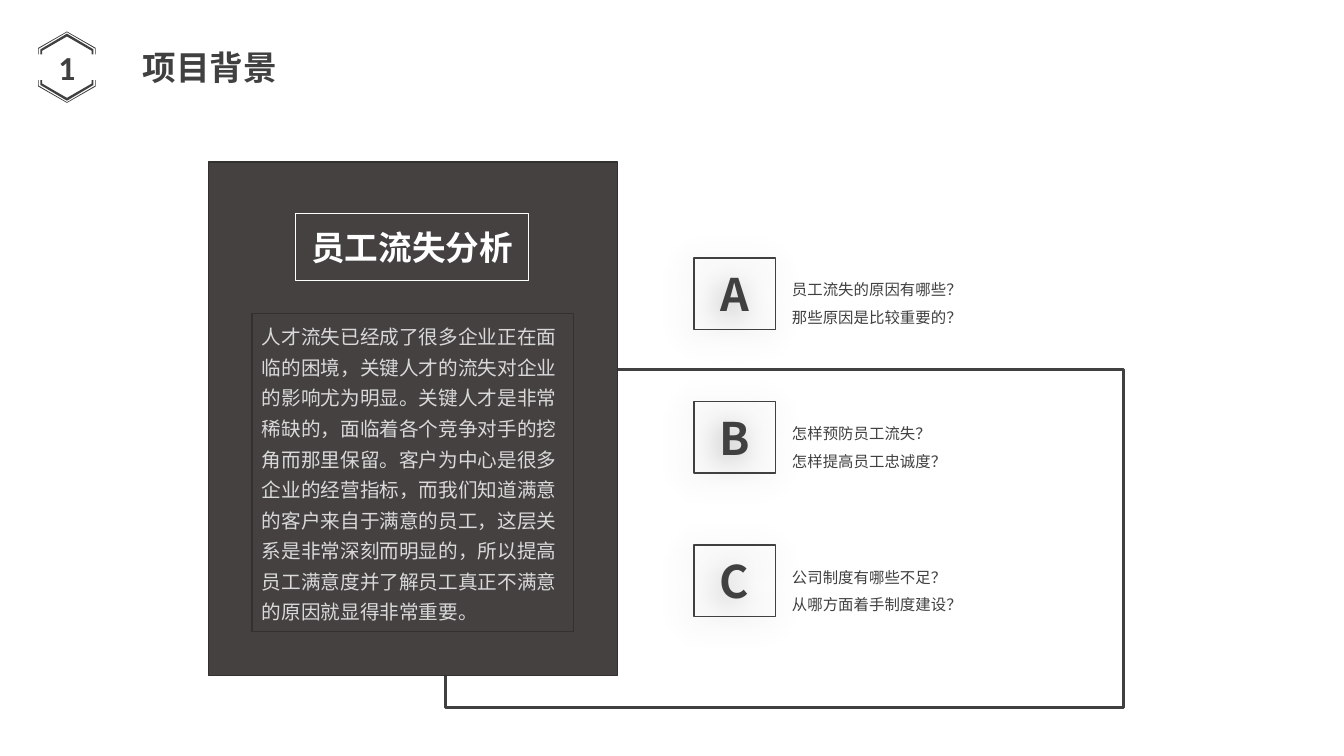
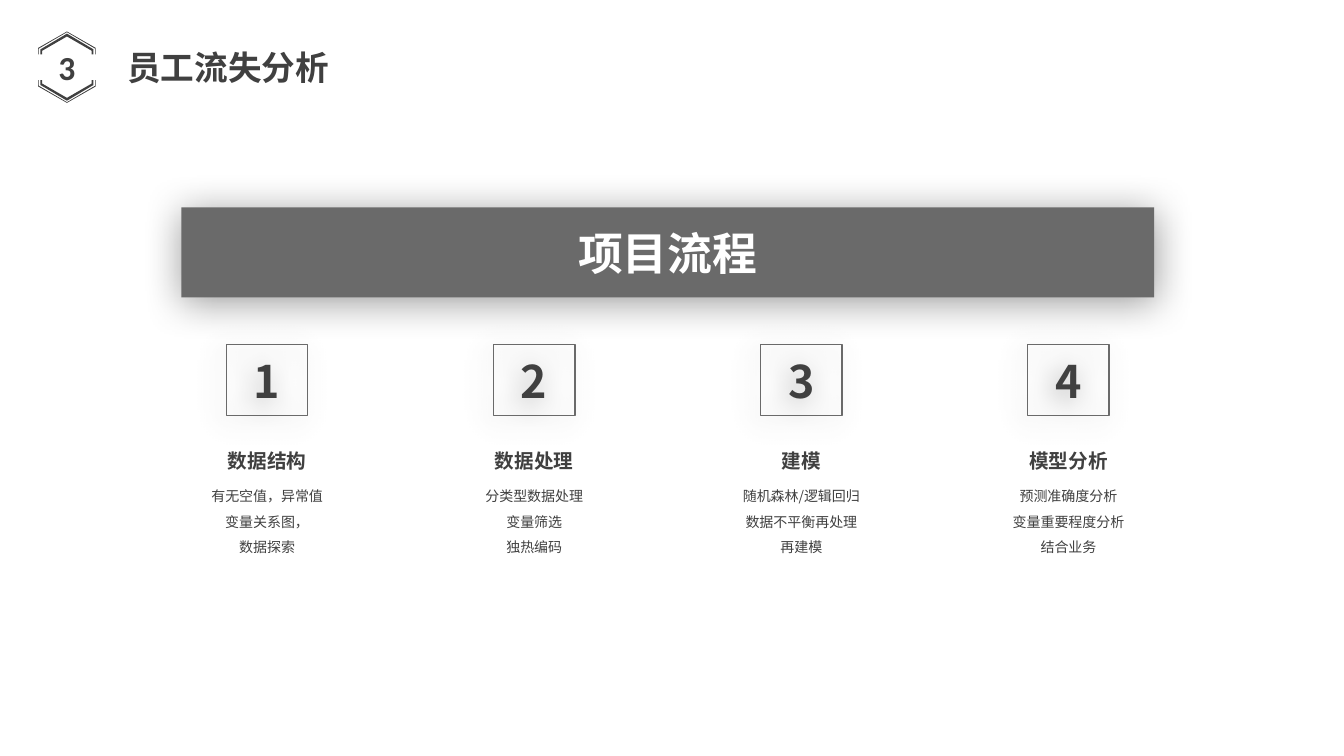
import dataclasses

import lxml.etree
import pptx
import pptx.dml.color
import pptx.enum.lang
import pptx.enum.shapes
import pptx.enum.text
import pptx.oxml.ns
import pptx.util

CHARCOAL = pptx.dml.color.RGBColor(0x40, 0x40, 0x40)
PANEL = pptx.dml.color.RGBColor(0x45, 0x41, 0x41)
PANEL_EDGE = pptx.dml.color.RGBColor(0x33, 0x30, 0x30)
GRAY = pptx.dml.color.RGBColor(0x6A, 0x6A, 0x6A)
PALE = pptx.dml.color.RGBColor(0xD9, 0xD9, 0xD9)
WHITE = pptx.dml.color.RGBColor(0xFF, 0xFF, 0xFF)

CJK_FONT = "Noto Sans CJK SC"
LATIN_FONT = "Calibri"
CELL = pptx.util.Inches(1) / 12
COLUMNS, ROWS = 160, 90
CARD_WIDTH, CARD_HEIGHT = 9.7, 8.5

LEFT = pptx.enum.text.PP_ALIGN.LEFT
CENTER = pptx.enum.text.PP_ALIGN.CENTER
TOP = pptx.enum.text.MSO_ANCHOR.TOP
MIDDLE = pptx.enum.text.MSO_ANCHOR.MIDDLE


def cells(count):
    """Turn a number of grid cells into a length."""
    return pptx.util.Emu(round(count * CELL))


@dataclasses.dataclass
class Box:
    """A rectangle measured in grid cells."""

    left: float
    top: float
    width: float
    height: float

    def inner(self, left, top, width, height):
        """Return a box placed relative to this one."""
        return Box(self.left + left, self.top + top, width, height)

    def lengths(self):
        """Return left, top, width and height as lengths."""
        return [cells(n) for n in (self.left, self.top, self.width, self.height)]


PAGE = Box(0, 0, COLUMNS, ROWS)


def write(shape, text, size, color=CHARCOAL, bold=False, font=CJK_FONT,
          align=LEFT, anchor=TOP, spacing=1.0):
    """Fill a shape with text, one paragraph for each line."""
    frame = shape.text_frame
    frame.word_wrap = True
    frame.auto_size = pptx.enum.text.MSO_AUTO_SIZE.NONE
    frame.vertical_anchor = anchor
    for index, line in enumerate(text.split("\n")):
        para = frame.add_paragraph() if index else frame.paragraphs[0]
        para.alignment = align
        para.line_spacing = spacing
        para.space_before = pptx.util.Pt(0)
        span = para.add_run()
        span.text = line
        span.font.size = pptx.util.Pt(size)
        span.font.bold = bold
        span.font.color.rgb = color
        span.font.name = font
        span.font.language_id = pptx.enum.lang.MSO_LANGUAGE_ID.SIMPLIFIED_CHINESE
        latin = span.font._element.find(pptx.oxml.ns.qn("a:latin"))
        east_asian = lxml.etree.Element(pptx.oxml.ns.qn("a:ea"), typeface=CJK_FONT)
        latin.addnext(east_asian)


def paint(shape, fill=None, line=None, weight=1):
    """Set fill and outline, and remove the shadow."""
    if fill is None:
        shape.fill.background()
    else:
        shape.fill.solid()
        shape.fill.fore_color.rgb = fill
    if line is None:
        shape.line.fill.background()
    else:
        shape.line.color.rgb = line
        shape.line.width = pptx.util.Pt(weight)
    shape.shadow.inherit = False


def add_rectangle(page, box, **look):
    """Draw a rectangle in the given box."""
    kind = pptx.enum.shapes.MSO_SHAPE.RECTANGLE
    shape = page.shapes.add_shape(kind, *box.lengths())
    paint(shape, **look)
    return shape


def add_label(page, box, text, **style):
    """Place a text box in the given box."""
    write(page.shapes.add_textbox(*box.lengths()), text, **style)


def add_shadow(shape, blur, distance, angle):
    """Give a shape a soft outer shadow."""
    qn = pptx.oxml.ns.qn
    effects = shape._element.spPr.find(qn("a:effectLst"))
    shadow = lxml.etree.SubElement(
        effects, qn("a:outerShdw"), blurRad=str(pptx.util.Pt(blur)),
        dist=str(pptx.util.Pt(distance)), dir=str(angle * 60000), rotWithShape="0")
    tint = lxml.etree.SubElement(shadow, qn("a:srgbClr"), val="000000")
    lxml.etree.SubElement(tint, qn("a:alpha"), val="40000")


def add_card(page, box, letter, line, blur):
    """Draw an outlined card with one bold character."""
    card = add_rectangle(page, box, line=line)
    add_shadow(card, blur, 5, 135)
    write(card, letter, 32, bold=True, align=CENTER, anchor=MIDDLE)


def add_band(page, box, direction, outer, inner):
    """Draw half of a hexagon outline, up (-1) or down (1)."""
    def arch(reach, shoulder, peak):
        shares = [(-reach, 0.18), (-reach, shoulder), (0, peak),
                  (reach, shoulder), (reach, 0.18)]
        return [(cells(box.left + box.width * (0.5 + x)),
                 cells(box.top + box.height * (0.5 + direction * y)))
                for x, y in shares]

    points = arch(*outer) + arch(*inner)[::-1]
    builder = page.shapes.build_freeform(*points[0], scale=1.0)
    builder.add_line_segments(points[1:], close=True)
    paint(builder.convert_to_shape(), fill=CHARCOAL)


def add_badge(page, box, number):
    """Draw the hexagon badge with the section number."""
    add_label(page, box, number, size=24, bold=True, font=LATIN_FONT,
              align=CENTER, anchor=MIDDLE)
    for direction in (-1, 1):
        add_band(page, box, direction, (0.5, 0.27, 0.5), (0.49, 0.26, 0.49))
        add_band(page, box, direction, (0.46, 0.25, 0.47), (0.43, 0.23, 0.43))


def add_page(deck, number, title, title_left):
    """Start a slide with its badge and title."""
    page = deck.slides.add_slide(deck.slide_layouts[5])
    heading = page.shapes.title
    box = PAGE.inner(title_left, 4.95, 60, 6)
    heading.left, heading.top, heading.width, heading.height = box.lengths()
    write(heading, title, 24, bold=True)
    add_badge(page, PAGE.inner(4.55, 3.75, 6.85, 8.5), number)
    return page


def add_panel(page, box, heading, body):
    """Draw the dark panel with a framed heading and body text."""
    add_rectangle(page, box, fill=PANEL, line=PANEL_EDGE)
    block = add_rectangle(page, box.inner(5.2, 18, 38.3, 37.9),
                          fill=PANEL, line=PANEL_EDGE)
    write(block, body, 14, color=PALE, font=LATIN_FONT, spacing=1.3)
    frame = add_rectangle(page, box.inner(10.4, 6.1, 27.7, 8), line=WHITE)
    write(frame, heading, 24, color=WHITE, bold=True, align=CENTER, anchor=MIDDLE)


def add_question(page, box, letter, text):
    """Place a lettered card with its questions beside it."""
    add_card(page, box.inner(0, 0, CARD_WIDTH, CARD_HEIGHT), letter, CHARCOAL, 23)
    add_label(page, box.inner(10.5, 1, 36.4, 7.4), text, size=11, spacing=1.5)


def add_step(page, box, number, name, text):
    """Place a numbered card with its name and details below."""
    indent = (box.width - CARD_WIDTH) / 2
    add_card(page, box.inner(indent, 0, CARD_WIDTH, CARD_HEIGHT), number, GRAY, 21)
    add_label(page, box.inner(0, 11.8, box.width, 4), name,
              size=14, bold=True, align=CENTER)
    add_label(page, box.inner(0, 15.5, box.width, 10.3), text,
              size=10, align=CENTER, spacing=1.5)


def build_background(deck):
    """Build the project background slide."""
    page = add_page(deck, "1", "项目背景", 15.8)
    add_rectangle(page, PAGE.inner(53, 44, 80.8, 40.2), line=CHARCOAL, weight=2)
    add_panel(
        page, PAGE.inner(24.8, 19.3, 48.7, 61.1), "员工流失分析",
        "人才流失已经成了很多企业正在面临的困境，关键人才的流失对企业的影响尤为明显。"
        "关键人才是非常稀缺的，面临着各个竞争对手的挖角而那里保留。"
        "客户为中心是很多企业的经营指标，而我们知道满意的客户来自于满意的员工，"
        "这层关系是非常深刻而明显的，所以提高员工满意度并了解员工真正不满意的原因"
        "就显得非常重要。")
    questions = [
        ("A", "员工流失的原因有哪些？\n那些原因是比较重要的？"),
        ("B", "怎样预防员工流失？\n怎样提高员工忠诚度？"),
        ("C", "公司制度有哪些不足？\n从哪方面着手制度建设？"),
    ]
    for index, (letter, text) in enumerate(questions):
        box = PAGE.inner(82.6, 30.7 + 17.1 * index, 46.9, CARD_HEIGHT)
        add_question(page, box, letter, text)


def build_process(deck):
    """Build the project process slide."""
    page = add_page(deck, "3", "员工流失分析", 13.95)
    banner = add_rectangle(page, PAGE.inner(21.6, 24.7, 115.8, 10.7), fill=GRAY)
    add_shadow(banner, 28, 3, 89)
    write(banner, "项目流程", 32, color=WHITE, bold=True, align=CENTER, anchor=MIDDLE)
    steps = [
        ("数据结构", "有无空值，异常值\n变量关系图，\n数据探索"),
        ("数据处理", "分类型数据处理\n变量筛选\n独热编码"),
        ("建模", "随机森林/逻辑回归\n数据不平衡再处理\n再建模"),
        ("模型分析", "预测准确度分析\n变量重要程度分析\n结合业务"),
    ]
    for index, (name, text) in enumerate(steps):
        box = PAGE.inner(21 + 31.8 * index, 41, 21.6, 25.8)
        add_step(page, box, str(index + 1), name, text)


def main():
    """Build and save the deck."""
    deck = pptx.Presentation()
    deck.slide_width, deck.slide_height = cells(COLUMNS), cells(ROWS)
    build_background(deck)
    build_process(deck)
    deck.save("out.pptx")


if __name__ == "__main__":
    main()
